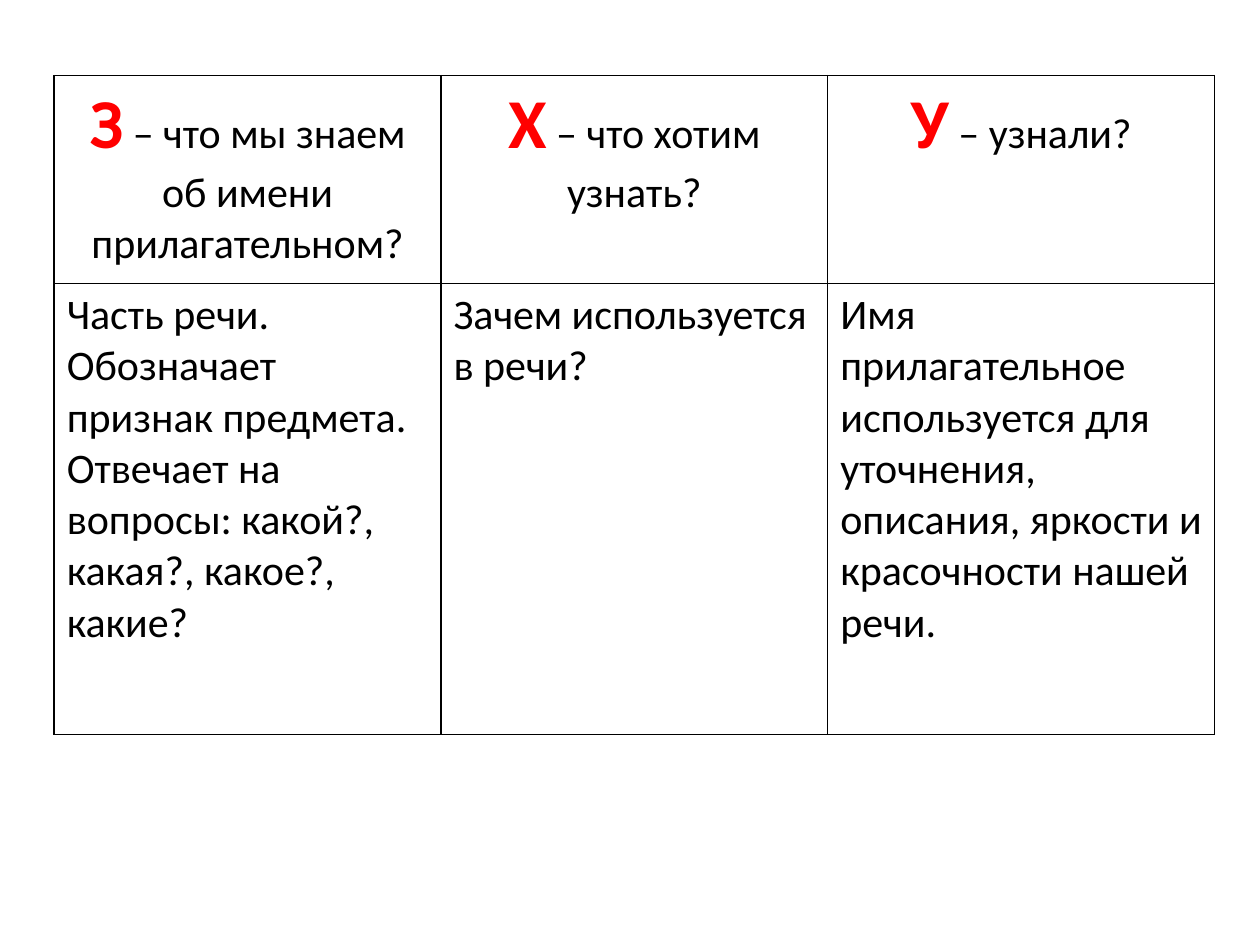
from dataclasses import dataclass

from lxml.etree import SubElement
from pptx import Presentation
from pptx.dml.color import RGBColor
from pptx.enum.text import PP_ALIGN as Align
from pptx.oxml.ns import qn
from pptx.util import Inches, Pt


@dataclass(frozen=True)
class Theme:
    """Colours, font and type sizes of the slide."""
    font: str = "Calibri"
    ink: str = "000000"
    accent: str = "FF0000"
    paper: str = "FFFFFF"
    letter_size: int = 40
    text_size: int = 24
    border: int = 1


THEME = Theme()
ROW_HEIGHTS = (1.65, 3.58)
COLUMNS = (
    ("З", " – что мы знаем об имени прилагательном?",
     ("Часть речи.", "Обозначает признак предмета.",
      "Отвечает на вопросы: какой?, какая?, какое?, какие?")),
    ("Х", " – что хотим узнать?", ("Зачем используется в речи?",)),
    ("У", " – узнали?",
     ("Имя прилагательное используется для уточнения, описания, "
      "яркости и красочности нашей речи.",)),
)


def style_cell(cell):
    """Give a cell thin borders on all sides and a plain fill."""
    properties = cell._tc.get_or_add_tcPr()
    for side in ("lnL", "lnR", "lnT", "lnB"):
        line = SubElement(properties, qn(f"a:{side}"), w=str(Pt(THEME.border)))
        fill = SubElement(line, qn("a:solidFill"))
        SubElement(fill, qn("a:srgbClr"), val=THEME.ink)
    cell.fill.solid()
    cell.fill.fore_color.rgb = RGBColor.from_string(THEME.paper)


def style_font(font, size, color, bold=False):
    """Set the face, size, colour and weight of a font."""
    font.name = THEME.font
    font.size = Pt(size)
    font.bold = bold
    font.color.rgb = RGBColor.from_string(color)


def write_heading(cell, letter, question):
    """Write a large red letter followed by its question."""
    para = cell.text_frame.paragraphs[0]
    para.alignment = Align.CENTER
    for text, size, color, bold in (
        (letter, THEME.letter_size, THEME.accent, True),
        (question, THEME.text_size, THEME.ink, False),
    ):
        span = para.add_run()
        span.text = text
        style_font(span.font, size, color, bold)


def write_answers(cell, answers):
    """Write one paragraph for each answer."""
    cell.text_frame.text = "\n".join(answers)
    for para in cell.text_frame.paragraphs:
        style_font(para.font, THEME.text_size, THEME.ink)


def add_knowledge_table(page, left, top, width):
    """Place the table of known, wanted and learned facts."""
    table = page.shapes.add_table(
        len(ROW_HEIGHTS), len(COLUMNS), Inches(left), Inches(top),
        Inches(width), Inches(sum(ROW_HEIGHTS))).table
    for row, height in zip(table.rows, ROW_HEIGHTS):
        row.height = Inches(height)
    for index, (letter, question, answers) in enumerate(COLUMNS):
        write_heading(table.cell(0, index), letter, question)
        write_answers(table.cell(1, index), answers)
    for cell in table.iter_cells():
        style_cell(cell)


def main():
    """Build and save the slide."""
    deck = Presentation()
    deck.slide_width, deck.slide_height = Inches(10), Inches(7.5)
    page = deck.slides.add_slide(deck.slide_layouts[6])
    add_knowledge_table(page, left=0.43, top=0.6, width=9.21)
    deck.save("out.pptx")


if __name__ == "__main__":
    main()
